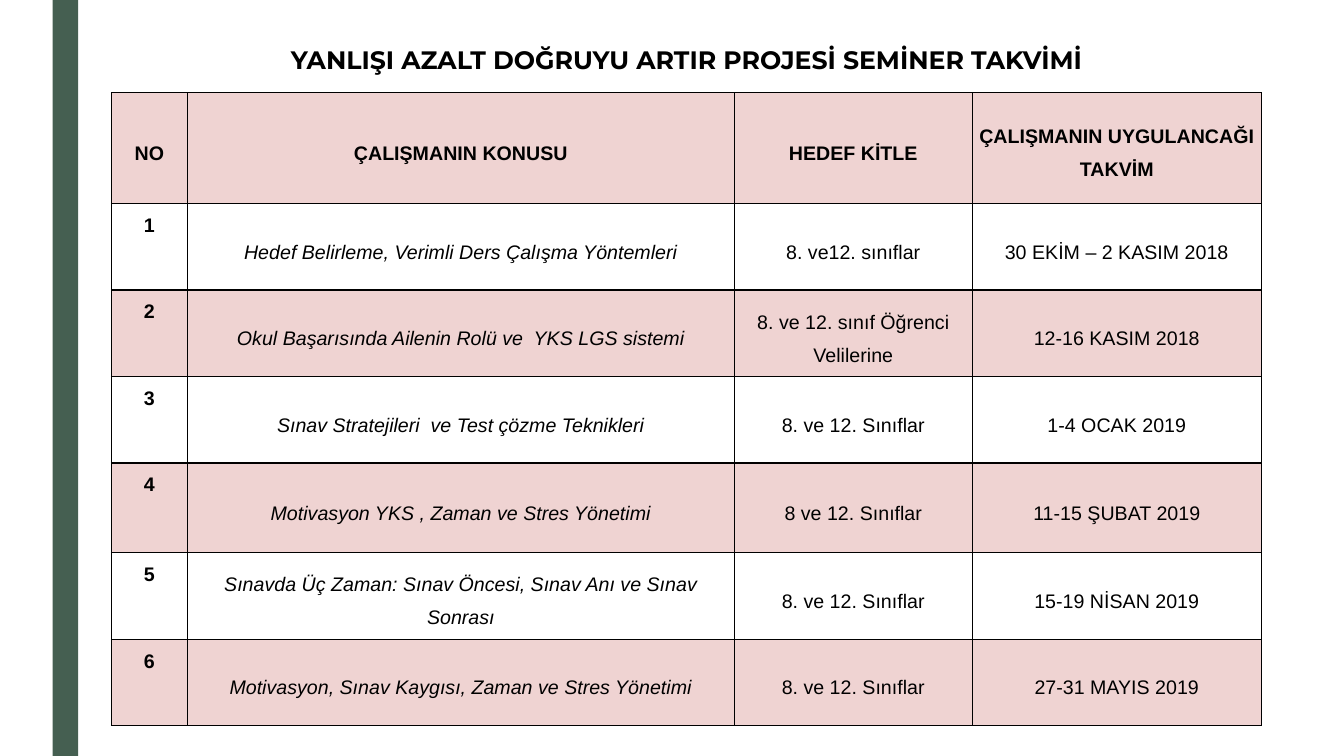
from dataclasses import dataclass

import pptx
import pptx.dml.color
import pptx.enum.shapes
import pptx.enum.text
import pptx.oxml.ns
import pptx.table
import pptx.util
from lxml import etree
from pptx.util import Cm

BLACK = pptx.dml.color.RGBColor(0x00, 0x00, 0x00)
GREEN = pptx.dml.color.RGBColor(0x45, 0x5F, 0x51)
PINK = pptx.dml.color.RGBColor(0xEF, 0xD3, 0xD2)

COLUMN_WIDTHS = (1.91, 13.79, 5.99, 7.29)
ROW_HEIGHTS = (2.01, 2.79, 2.18, 2.18, 2.18, 2.26, 2.18, 2.18)
TITLE = "YANLIŞI AZALT DOĞRUYU ARTIR PROJESİ SEMİNER TAKVİMİ"
HEADINGS = ("NO", "ÇALIŞMANIN KONUSU", "HEDEF KİTLE", "ÇALIŞMANIN UYGULANCAĞI TAKVİM")


@dataclass(frozen=True)
class Seminar:
    topic: str
    audience: str
    dates: str


@dataclass(frozen=True)
class TextStyle:
    size: int = 14
    font: str = "Arial"
    bold: bool = False
    italic: bool = False
    anchor: pptx.enum.text.MSO_ANCHOR = pptx.enum.text.MSO_ANCHOR.MIDDLE


SEMINARS = (
    Seminar("Hedef Belirleme, Verimli Ders Çalışma Yöntemleri",
            "8. ve12. sınıflar", "30 EKİM – 2 KASIM 2018"),
    Seminar("Okul Başarısında Ailenin Rolü ve  YKS LGS sistemi",
            "8. ve 12. sınıf Öğrenci Velilerine", "12-16 KASIM 2018"),
    Seminar("Sınav Stratejileri  ve Test çözme Teknikleri",
            "8. ve 12. Sınıflar", "1-4 OCAK 2019"),
    Seminar("Motivasyon YKS , Zaman ve Stres Yönetimi",
            "8 ve 12. Sınıflar", "11-15 ŞUBAT 2019"),
    Seminar("Sınavda Üç Zaman: Sınav Öncesi, Sınav Anı ve Sınav Sonrası",
            "8. ve 12. Sınıflar", "15-19 NİSAN 2019"),
    Seminar("Motivasyon, Sınav Kaygısı, Zaman ve Stres Yönetimi",
            "8. ve 12. Sınıflar", "27-31 MAYIS 2019"),
)

TITLE_STYLE = TextStyle(size=18, font="Montserrat", bold=True)
HEADING_STYLE = TextStyle(bold=True)
BODY_STYLES = (
    TextStyle(bold=True, anchor=pptx.enum.text.MSO_ANCHOR.TOP),
    TextStyle(italic=True),
    TextStyle(),
    TextStyle(),
)


def set_borders(cell: pptx.table._Cell, visible_sides: str) -> None:
    """Draw a thin black line on the named sides (L, R, T, B) and none on the others."""
    properties = cell._tc.get_or_add_tcPr()
    for position, side in enumerate("LRTB"):
        line = etree.Element(pptx.oxml.ns.qn(f"a:ln{side}"), w=str(pptx.util.Pt(1)))
        if side in visible_sides:
            fill = etree.SubElement(line, pptx.oxml.ns.qn("a:solidFill"))
            etree.SubElement(fill, pptx.oxml.ns.qn("a:srgbClr"), val=str(BLACK))
        else:
            etree.SubElement(line, pptx.oxml.ns.qn("a:noFill"))
        properties.insert(position, line)


def write_cell(cell: pptx.table._Cell, text: str, style: TextStyle) -> None:
    cell.margin_left = cell.margin_right = Cm(0.15)
    cell.margin_top = cell.margin_bottom = Cm(0)
    cell.vertical_anchor = style.anchor
    paragraph = cell.text_frame.paragraphs[0]
    paragraph.alignment = pptx.enum.text.PP_ALIGN.CENTER
    paragraph.line_spacing = 1.5
    run = paragraph.add_run()
    run.text = text
    run.font.size = pptx.util.Pt(style.size)
    run.font.name = style.font
    run.font.bold = style.bold
    run.font.italic = style.italic
    run.font.color.rgb = BLACK


def add_side_band(slide: pptx.slide.Slide, height: int) -> None:
    band = slide.shapes.add_shape(
        pptx.enum.shapes.MSO_SHAPE.RECTANGLE, Cm(1.33), Cm(0), Cm(0.64), height)
    band.shadow.inherit = False
    band.fill.solid()
    band.fill.fore_color.rgb = GREEN
    band.line.fill.background()


def add_calendar(slide: pptx.slide.Slide) -> None:
    table = slide.shapes.add_table(
        len(ROW_HEIGHTS), len(COLUMN_WIDTHS), Cm(2.81), Cm(0.33),
        Cm(sum(COLUMN_WIDTHS)), Cm(sum(ROW_HEIGHTS))).table
    table.first_row = False
    table.horz_banding = False
    for column, width in zip(table.columns, COLUMN_WIDTHS):
        column.width = Cm(width)
    for row, height in zip(table.rows, ROW_HEIGHTS):
        row.height = Cm(height)

    title_cell = table.cell(0, 0)
    title_cell.merge(table.cell(0, len(COLUMN_WIDTHS) - 1))
    write_cell(title_cell, TITLE, TITLE_STYLE)
    for cell in table.rows[0].cells:
        cell.fill.background()
        set_borders(cell, "B")

    lines = [(HEADINGS, (HEADING_STYLE,) * len(HEADINGS))]
    for number, seminar in enumerate(SEMINARS, start=1):
        texts = (str(number), seminar.topic, seminar.audience, seminar.dates)
        lines.append((texts, BODY_STYLES))

    for row_index, (texts, styles) in enumerate(lines, start=1):
        for cell, text, style in zip(table.rows[row_index].cells, texts, styles):
            write_cell(cell, text, style)
            if row_index % 2:
                cell.fill.solid()
                cell.fill.fore_color.rgb = PINK
            else:
                cell.fill.background()
            set_borders(cell, "LRTB")


def main() -> None:
    presentation = pptx.Presentation()
    presentation.slide_width = Cm(33.87)
    presentation.slide_height = Cm(19.05)
    slide = presentation.slides.add_slide(presentation.slide_layouts.get_by_name("Blank"))
    add_side_band(slide, presentation.slide_height)
    add_calendar(slide)
    presentation.save("out.pptx")


if __name__ == "__main__":
    main()
